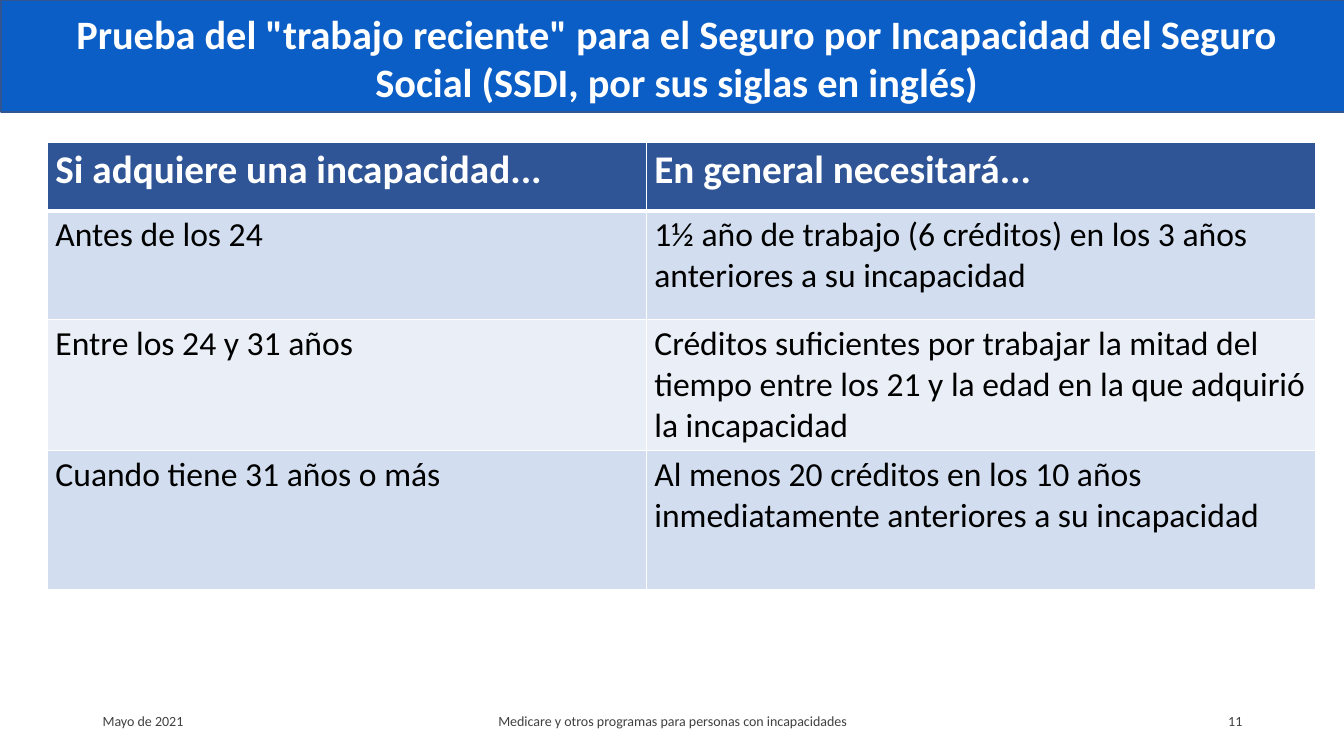
from lxml import etree
from pptx import Presentation
from pptx.dml.color import RGBColor
from pptx.enum.shapes import MSO_SHAPE
from pptx.enum.text import MSO_ANCHOR, MSO_AUTO_SIZE, PP_ALIGN
from pptx.oxml.ns import qn
from pptx.util import Inches, Pt

RECTANGLE = MSO_SHAPE.RECTANGLE
TOP, MIDDLE = MSO_ANCHOR.TOP, MSO_ANCHOR.MIDDLE
LEFT, CENTER, RIGHT = PP_ALIGN.LEFT, PP_ALIGN.CENTER, PP_ALIGN.RIGHT
NO_AUTOFIT = MSO_AUTO_SIZE.NONE
TITLE_ONLY_LAYOUT = 5

WHITE = RGBColor(0xFF, 0xFF, 0xFF)
BLACK = RGBColor(0x00, 0x00, 0x00)
GRAY = RGBColor(0x40, 0x40, 0x40)
BAND_BLUE = RGBColor(0x0A, 0x5E, 0xC6)
BAND_EDGE = RGBColor(0x32, 0x54, 0x91)
HEADER_BLUE = RGBColor(0x2F, 0x55, 0x97)
ROW_FILLS = (RGBColor(0xD2, 0xDE, 0xEF), RGBColor(0xEA, 0xEF, 0xF7))

FONT = "Calibri"
TITLE = ('Prueba del "trabajo reciente" para el Seguro por Incapacidad '
         "del Seguro Social (SSDI, por sus siglas en inglés)")
WORK_TEST = (
    ("Si adquiere una incapacidad...", "En general necesitará..."),
    ("Antes de los 24",
     "1½ año de trabajo (6 créditos) en los 3 años anteriores a su incapacidad"),
    ("Entre los 24 y 31 años",
     "Créditos suficientes por trabajar la mitad del tiempo entre los 21 y la edad "
     "en la que adquirió la incapacidad"),
    ("Cuando tiene 31 años o más",
     "Al menos 20 créditos en los 10 años inmediatamente anteriores a su incapacidad"),
)
COLUMN_WIDTHS = (5.94, 6.64)
ROW_HEIGHTS = (0.68, 1.08, 1.1, 1.38)
FOOTER = (
    (0, 3, "Mayo de 2021", LEFT),
    (3.5, 4.5, "Medicare y otros programas para personas con incapacidades", CENTER),
    (8.5, 3, "11", RIGHT),
)


def write(text_frame, text, size, color, bold=False, align=LEFT):
    paragraph = text_frame.paragraphs[0]
    paragraph.alignment = align
    run = paragraph.add_run()
    run.text = text
    run.font.name = FONT
    run.font.size = Pt(size)
    run.font.bold = bold
    run.font.color.rgb = color


def add_title(slide, left, top, width, height):
    title = slide.shapes.title
    title.left, title.top = Inches(left + 0.37), Inches(top + 0.01)
    title.width, title.height = Inches(width - 0.66), Inches(height + 0.01)
    frame = title.text_frame
    frame.word_wrap = True
    frame.auto_size = NO_AUTOFIT
    frame.vertical_anchor = MIDDLE
    write(frame, TITLE, 28.8, WHITE, True, CENTER)

    band = slide.shapes.add_shape(
        RECTANGLE, Inches(left), Inches(top), Inches(width), Inches(height))
    band.shadow.inherit = False
    band.fill.solid()
    band.fill.fore_color.rgb = BAND_BLUE
    band.line.color.rgb = BAND_EDGE
    band.line.width = Pt(1)
    title.element.addprevious(band.element)


def set_borders(cell, **widths):
    """Draw white borders; the keys are L, R, T and B, the widths are points."""
    properties = cell._tc.get_or_add_tcPr()
    for side, width in widths.items():
        line = etree.SubElement(properties, qn("a:ln" + side), w=str(Pt(width)))
        fill = etree.SubElement(line, qn("a:solidFill"))
        etree.SubElement(fill, qn("a:srgbClr"), val=str(WHITE))


def add_work_test_table(slide, left, top, width, height):
    table = slide.shapes.add_table(
        len(WORK_TEST), len(COLUMN_WIDTHS),
        Inches(left), Inches(top), Inches(width), Inches(height)).table
    for column, column_width in zip(table.columns, COLUMN_WIDTHS):
        column.width = Inches(column_width)
    for row_index, texts in enumerate(WORK_TEST):
        table.rows[row_index].height = Inches(ROW_HEIGHTS[row_index])
        is_header = row_index == 0
        for column_index, text in enumerate(texts):
            cell = table.cell(row_index, column_index)
            cell.margin_left = cell.margin_right = Inches(0.08)
            cell.margin_top = cell.margin_bottom = Inches(0.04)
            cell.vertical_anchor = TOP
            set_borders(cell, L=1, R=1, T=3 if row_index == 1 else 1,
                        B=3 if is_header else 1)
            cell.fill.solid()
            cell.fill.fore_color.rgb = (
                HEADER_BLUE if is_header else ROW_FILLS[(row_index - 1) % 2])
            write(cell.text_frame, text, 28 if is_header else 24,
                  WHITE if is_header else BLACK, is_header)


def add_footer(slide, left, top, height):
    for offset, width, text, align in FOOTER:
        box = slide.shapes.add_textbox(
            Inches(left + offset), Inches(top), Inches(width), Inches(height))
        box.text_frame.word_wrap = True
        box.text_frame.vertical_anchor = MIDDLE
        write(box.text_frame, text, 10, GRAY, align=align)


def main():
    presentation = Presentation()
    presentation.slide_width = Inches(13.33)
    presentation.slide_height = Inches(7.5)
    slide = presentation.slides.add_slide(
        presentation.slide_layouts[TITLE_ONLY_LAYOUT])
    add_title(slide, 0.01, 0, 13.33, 1.11)
    add_work_test_table(slide, 0.47, 1.41, sum(COLUMN_WIDTHS), sum(ROW_HEIGHTS))
    add_footer(slide, 0.92, 6.95, 0.4)
    presentation.save("out.pptx")


if __name__ == "__main__":
    main()
